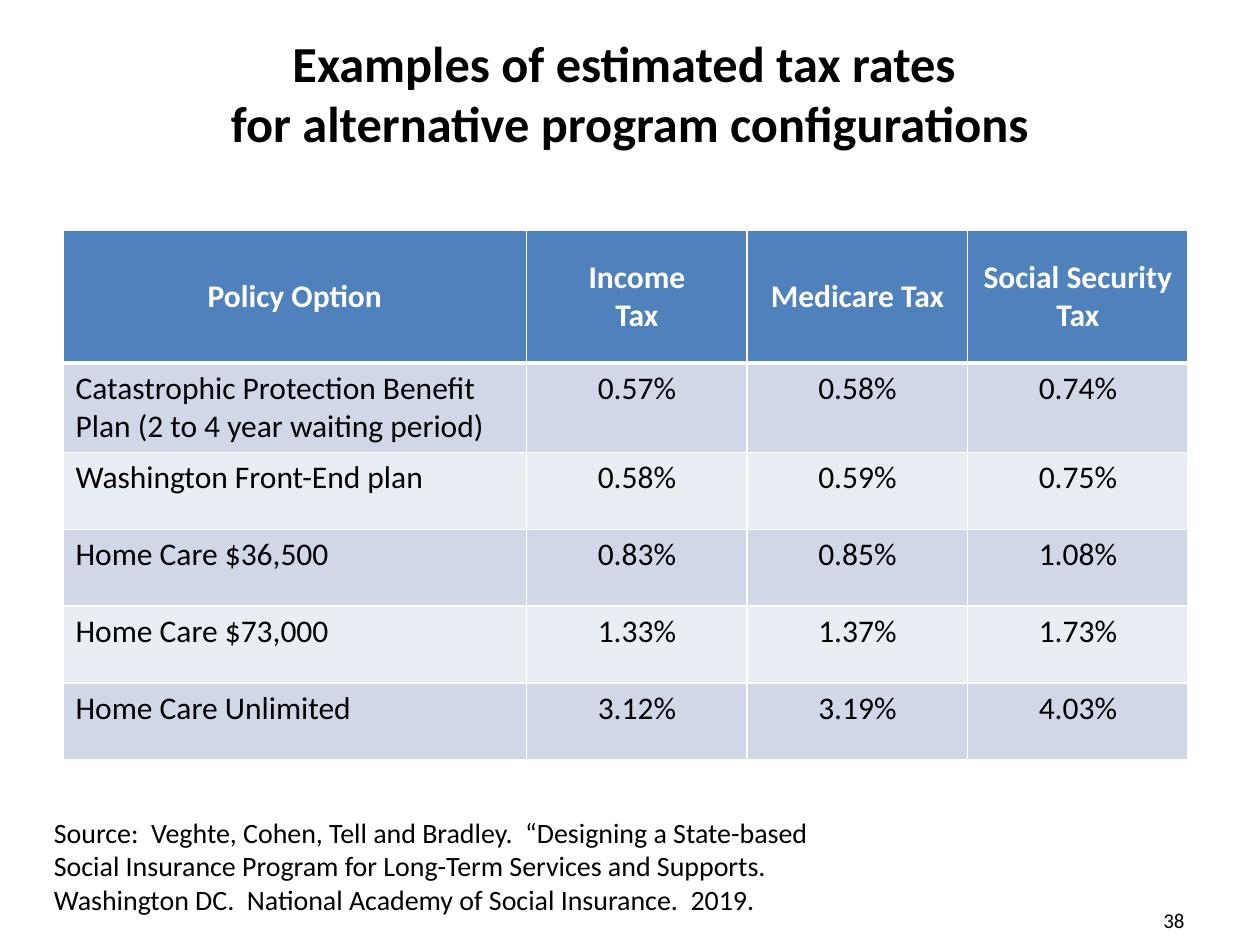
from dataclasses import dataclass

from lxml.etree import SubElement
from pptx import Presentation
from pptx.dml.color import RGBColor
from pptx.enum.text import MSO_ANCHOR as Anchor, PP_ALIGN as Align
from pptx.oxml.ns import qn
from pptx.util import Inches, Pt


@dataclass(frozen=True)
class Theme:
    font: str = "Calibri"
    black: str = "000000"
    white: str = "FFFFFF"
    header: str = "4F81BD"
    bands: tuple = ("D0D8E8", "E9EDF4")
    title_size: float = 28.8
    table_size: float = 18
    source_size: float = 16
    number_size: float = 12
    thin: float = 1
    thick: float = 3


@dataclass(frozen=True)
class TextBlock:
    text: str
    box: tuple
    size: float
    align: Align = Align.LEFT
    anchor: Anchor = Anchor.TOP
    bold: bool = False


@dataclass(frozen=True)
class Policy:
    name: str
    rates: tuple


THEME = Theme()

TEXTS = (
    TextBlock("Examples of estimated tax rates \vfor alternative program configurations",
              (0.5, 0.3, 9, 0.87), THEME.title_size, Align.CENTER, Anchor.MIDDLE, True),
    TextBlock("38", (7.17, 7.1, 2.33, 0.4), THEME.number_size, Align.RIGHT, Anchor.MIDDLE),
    TextBlock("Source:  Veghte, Cohen, Tell and Bradley.  “Designing a State-based "
              "Social Insurance Program for Long-Term Services and Supports.  "
              "Washington DC.  National Academy of Social Insurance.  2019.",
              (0.33, 6.42, 6.33, 0.91), THEME.source_size),
)

HEADINGS = ("Policy Option", "Income\nTax", "Medicare Tax", "Social Security Tax")
POLICIES = (
    Policy("Catastrophic Protection Benefit Plan (2 to 4 year waiting period)",
           ("0.57%", "0.58%", "0.74%")),
    Policy("Washington Front-End plan", ("0.58%", "0.59%", "0.75%")),
    Policy("Home Care $36,500", ("0.83%", "0.85%", "1.08%")),
    Policy("Home Care $73,000", ("1.33%", "1.37%", "1.73%")),
    Policy("Home Care Unlimited", ("3.12%", "3.19%", "4.03%")),
)
COLUMN_WIDTHS = (3.68, 1.75, 1.75, 1.75)
HEADER_HEIGHT, ROW_HEIGHT = 1.05, 0.61


def write_text(tf, text: str, size: float, align: Align, bold: bool, color: str) -> None:
    tf.text = text
    for p in tf.paragraphs:
        p.alignment = align
        for r in p.runs:
            for name, value in {"name": THEME.font, "size": Pt(size), "bold": bold}.items():
                setattr(r.font, name, value)
            r.font.color.rgb = RGBColor.from_string(color)


def add_text(slide, block: TextBlock) -> None:
    tf = slide.shapes.add_textbox(*map(Inches, block.box)).text_frame
    for name, value in {"word_wrap": True, "vertical_anchor": block.anchor}.items():
        setattr(tf, name, value)
    write_text(tf, block.text, block.size, block.align, block.bold, THEME.black)


def set_borders(cell, top: float, bottom: float) -> None:
    tcPr = cell._tc.get_or_add_tcPr()
    widths = {"a:lnL": THEME.thin, "a:lnR": THEME.thin, "a:lnT": top, "a:lnB": bottom}
    for tag, width in widths.items():
        ln = SubElement(tcPr, qn(tag), w=str(Pt(width)))
        SubElement(SubElement(ln, qn("a:solidFill")), qn("a:srgbClr"), val=THEME.white)


def add_rate_table(slide) -> None:
    rows = [HEADINGS] + [(policy.name, *policy.rates) for policy in POLICIES]
    heights = [HEADER_HEIGHT] + [ROW_HEIGHT] * len(POLICIES)
    table = slide.shapes.add_table(
        len(rows), len(HEADINGS), Inches(0.5), Inches(1.83),
        Inches(sum(COLUMN_WIDTHS)), Inches(sum(heights))).table
    for column, width in zip(table.columns, COLUMN_WIDTHS):
        column.width = Inches(width)
    for i, (values, height) in enumerate(zip(rows, heights)):
        table.rows[i].height = Inches(height)
        header = i == 0
        fill = THEME.header if header else THEME.bands[(i - 1) % 2]
        for j, value in enumerate(values):
            cell = table.cell(i, j)
            cell.vertical_anchor = Anchor.MIDDLE if header else Anchor.TOP
            write_text(cell.text_frame, value, THEME.table_size,
                       Align.CENTER if header or j else Align.LEFT,
                       header, THEME.white if header else THEME.black)
            # The heavy rule is shared by the header and the first policy
            set_borders(cell, THEME.thick if i == 1 else THEME.thin,
                        THEME.thick if header else THEME.thin)
            cell.fill.solid()
            cell.fill.fore_color.rgb = RGBColor.from_string(fill)


def main() -> None:
    prs = Presentation()
    prs.slide_width, prs.slide_height = Inches(10), Inches(7.5)
    s = prs.slides.add_slide(prs.slide_layouts[6])

    # Tax rates by policy option
    add_rate_table(s)

    # Title, page number and source
    for block in TEXTS:
        add_text(s, block)

    prs.save("out.pptx")


if __name__ == "__main__":
    main()
